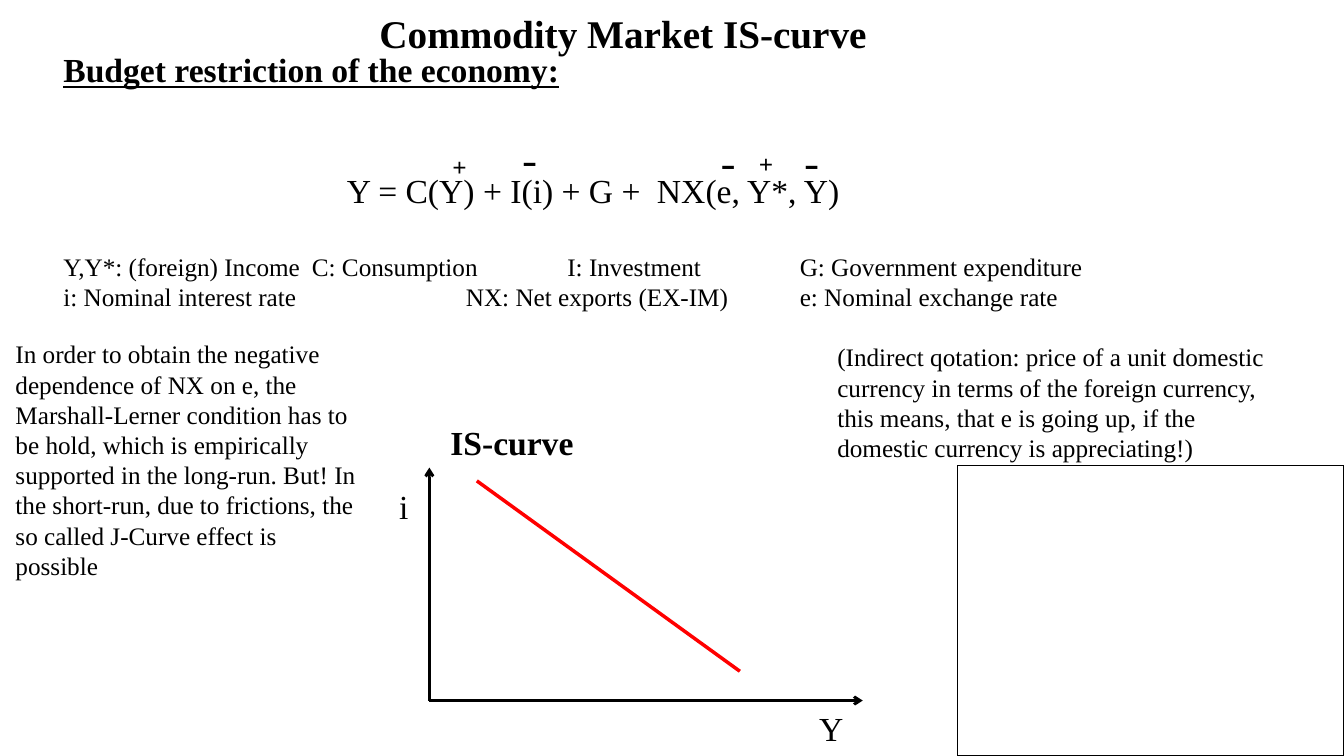
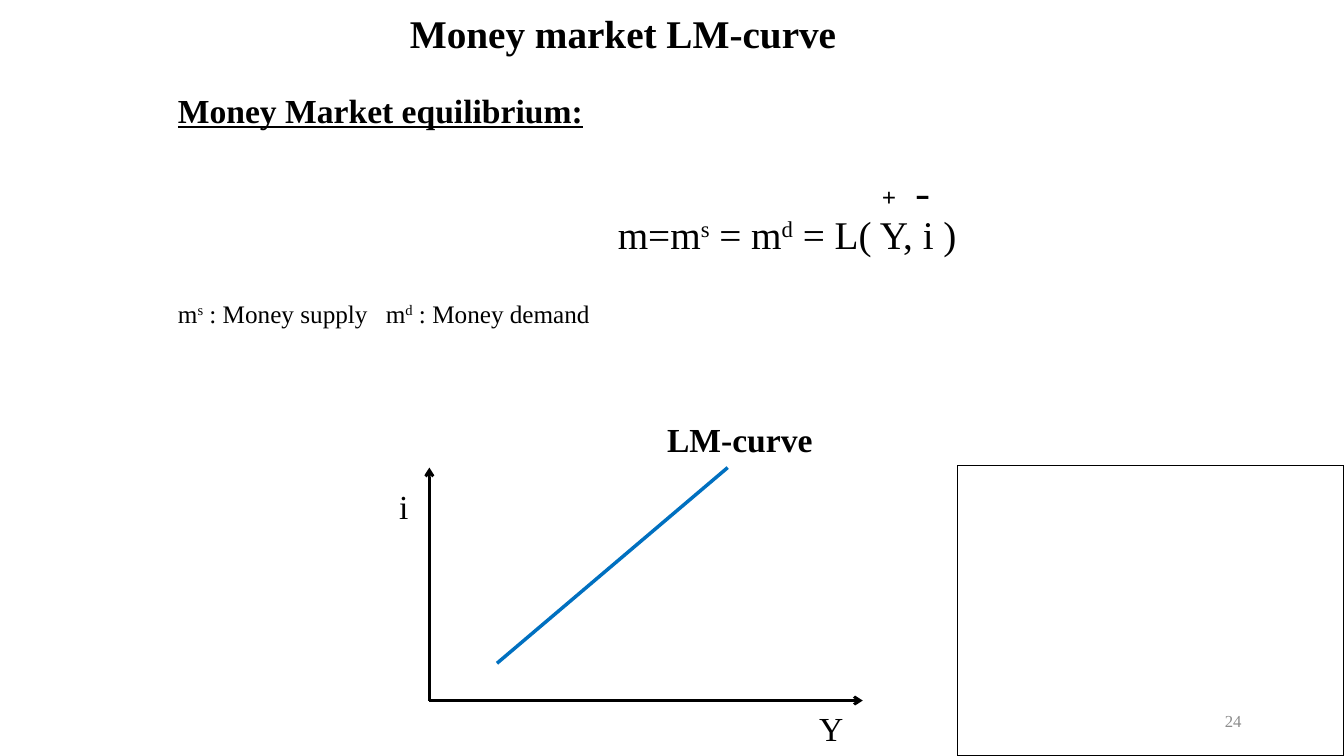
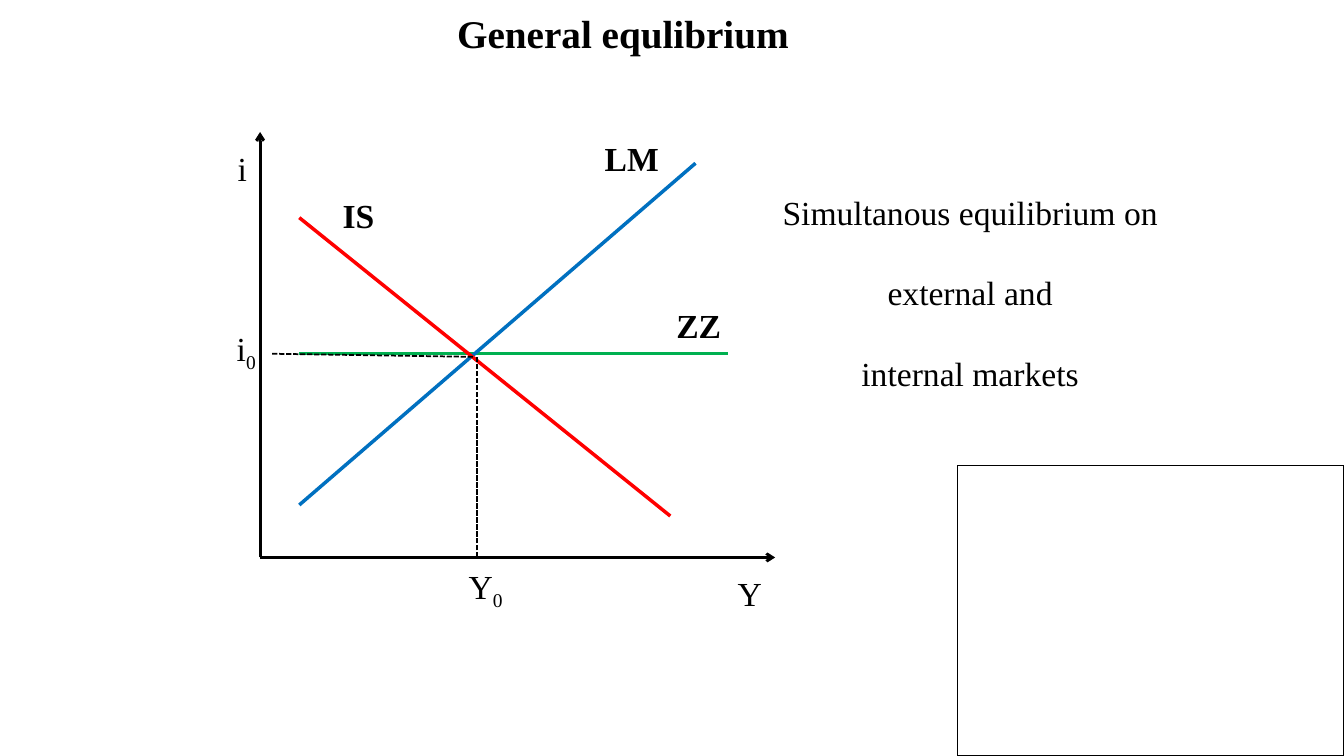
from lxml.etree import SubElement
from pptx import Presentation
from pptx.dml.color import RGBColor
from pptx.enum.dml import MSO_LINE_DASH_STYLE as Dash
from pptx.enum.shapes import MSO_CONNECTOR as Connector, MSO_SHAPE as Shape
from pptx.enum.text import MSO_ANCHOR as Anchor, MSO_AUTO_SIZE as AutoSize, PP_ALIGN as Align
from pptx.oxml.ns import qn
from pptx.util import Pt

BLACK = RGBColor(0x00, 0x00, 0x00)
GREY = RGBColor(0x8C, 0x8C, 0x8C)
RED = RGBColor(0xFF, 0x00, 0x00)
BLUE = RGBColor(0x00, 0x70, 0xC0)
GREEN = RGBColor(0x00, 0xB0, 0x50)

SERIF = "Times New Roman"
MONO = "Noto Sans Mono"
LINE_HEIGHT = 1.2
SUPER, SUB = 30000, -25000
TITLE_ONLY = 5


class Lecture:
    def __init__(self):
        self.deck = Presentation()
        self.deck.slide_width, self.deck.slide_height = Pt(960), Pt(540)
        self.page = None

    def new_page(self, title):
        self.page = self.deck.slides.add_slide(self.deck.slide_layouts[TITLE_ONLY])
        box = self.page.shapes.title
        box.left, box.top, box.width, box.height = Pt(179.5), Pt(3), Pt(531), Pt(41)
        self.fill_text(box.text_frame, [[title]], size=28, bold=True, align=Align.CENTER)

    def fill_text(self, frame, paragraphs, size=24, bold=False, underline=False,
                  color=BLACK, font=SERIF, align=Align.LEFT, anchor=Anchor.TOP,
                  wrap=True, gap=0, tabs=()):
        """Each paragraph is a list of runs: a string, or a (string, baseline) pair.

        tabs holds one list of tab positions for each paragraph that needs them.
        """
        frame.word_wrap = wrap
        frame.auto_size = AutoSize.NONE
        frame.vertical_anchor = anchor
        for index, runs in enumerate(paragraphs):
            para = frame.add_paragraph() if index else frame.paragraphs[0]
            para.alignment = align
            para.space_before = Pt(gap if index else 0)
            if font == SERIF:
                para.line_spacing = Pt(size * LINE_HEIGHT)
            if index < len(tabs):
                tab_list = SubElement(para._p.get_or_add_pPr(), qn("a:tabLst"))
                for stop in tabs[index]:
                    SubElement(tab_list, qn("a:tab"), pos=str(int(Pt(stop))), algn="l")
            for run in runs:
                text, baseline = (run, None) if isinstance(run, str) else run
                span = para.add_run()
                span.text = text
                span.font.name, span.font.size = font, Pt(size)
                span.font.bold, span.font.underline = bold, underline
                span.font.color.rgb = color
                if baseline:
                    span._r.get_or_add_rPr().set("baseline", str(baseline))

    def text(self, left, top, width, height, paragraphs, **style):
        box = self.page.shapes.add_textbox(Pt(left), Pt(top), Pt(width), Pt(height))
        self.fill_text(box.text_frame, paragraphs, **style)

    def label(self, left, top, width, *runs, **style):
        self.text(left, top, width, 36, [runs], wrap=False, **style)

    def heading(self, left, top, text):
        self.text(left, top, 500, 36, [[text]], bold=True, underline=True)

    def plus(self, left, top):
        self.label(left, top, 25, "+", size=18, bold=True)

    def minus(self, left, top):
        self.label(left, top, 25, "−", size=18, bold=True, font=MONO)

    def line(self, start, end, color=BLACK, width=2.5, dash=None, arrow=False):
        line = self.page.shapes.add_connector(
            Connector.STRAIGHT, *(Pt(value) for value in (*start, *end)))
        line.line.color.rgb = color
        line.line.width = Pt(width)
        if dash:
            line.line.dash_style = dash
        properties = line._element.spPr
        if arrow:
            SubElement(properties.find(qn("a:ln")), qn("a:tailEnd"), type="arrow")
        SubElement(properties, qn("a:effectLst"))

    def axes(self, left, bottom, right, top):
        for end in ((left, top), (right, bottom)):
            self.line((left, bottom), end, width=2, arrow=True)

    def curve_axes(self):
        """Labelled axes shared by the pages that show a single curve."""
        self.axes(306.7, 500.4, 616.3, 334)
        self.label(278, 343.5, 21, "i")
        self.label(578, 502, 32.4, "Y")

    def corner_frame(self):
        frame = self.page.shapes.add_shape(
            Shape.RECTANGLE, Pt(684), Pt(332.6), Pt(276), Pt(207.4))
        frame.shadow.inherit = False
        frame.fill.background()
        frame.line.color.rgb = BLACK
        frame.line.width = Pt(1)


def add_commodity_market(lecture):
    lecture.new_page("Commodity Market IS-curve")
    lecture.heading(38.2, 31.7, "Budget restriction of the economy:")
    lecture.text(240.7, 118, 400, 36, [["Y = C(Y) + I(i) + G +\tNX(e, Y*, Y)"]],
                 tabs=[[221.5]])
    for left, top in ((535, 102.2), (316, 104.4)):
        lecture.plus(left, top)
    for left, top in ((365.8, 102.2), (567.4, 104.4), (507.6, 104.4)):
        lecture.minus(left, top)
    lecture.text(38.2, 175.7, 775, 52, [
        ["Y,Y*: (foreign) Income\tC: Consumption\tI: Investment\tG: Government expenditure"],
        ["i: Nominal interest rate\tNX: Net exports (EX-IM)\te: Nominal exchange rate"],
    ], size=18, tabs=[[177.5, 360, 526], [287.5, 526]])
    lecture.text(591, 240.5, 339, 94, [[
        "(Indirect qotation: price of a unit domestic currency in terms of the foreign "
        "currency, this means, that e is going up, if the domestic currency is "
        "appreciating!)"]], size=18)
    lecture.text(4, 238.3, 261.4, 181.4, [[
        "In order to obtain the negative dependence of NX on e, the Marshall-Lerner "
        "condition has to be hold, which is empirically supported in the long-run. But! "
        "In the short-run, due to frictions, the so called J-Curve effect is possible"]],
        size=18)
    lecture.curve_axes()
    lecture.line((340.6, 343.5), (528.5, 479.5), RED)
    lecture.label(314.6, 298, 104, "IS-curve", bold=True)
    lecture.corner_frame()


def add_money_market(lecture):
    lecture.new_page("Money market LM-curve")
    lecture.text(678, 500.4, 216, 28.8, [["24"]], size=12, color=GREY,
                 align=Align.RIGHT, anchor=Anchor.MIDDLE)
    lecture.heading(120, 60.5, "Money Market equilibrium:")
    lecture.text(434.2, 146.9, 300, 41, [
        ["m=m", ("s", SUPER), " = m", ("d", SUPER), " = L( Y, i )"]], size=28)
    lecture.plus(622.8, 126)
    lecture.minus(646.6, 126)
    lecture.text(120, 209.3, 500, 30, [
        ["m", ("s", SUPER), " : Money supply\tm", ("d", SUPER), " : Money demand"]],
        size=18, tabs=[[148.5]])
    lecture.curve_axes()
    lecture.line((355, 473.8), (519.8, 334), BLUE)
    lecture.label(469.4, 296, 119.5, "LM-curve", bold=True)
    lecture.corner_frame()


def add_general_equilibrium(lecture):
    lecture.new_page("General equlibrium")
    lecture.axes(185.8, 398.2, 553.7, 94.3)
    lecture.label(162.7, 102.2, 21, "i")
    lecture.label(519.8, 406, 32.4, "Y")
    lecture.line((213.8, 252.7), (519.8, 252.7), GREEN)
    lecture.line((213.8, 360.7), (496.8, 116.6), BLUE)
    lecture.line((213.8, 155.5), (478.8, 368.6), RED)
    for left, top, name in ((424.8, 95, "LM"), (237.6, 136, "IS"), (476, 214.6, "ZZ")):
        lecture.label(left, top, 54, name, bold=True)
    lecture.text(546.5, 133.2, 293, 152.6, [
        ["Simultanous equilibrium on"], ["external and"], ["internal markets"]],
        align=Align.CENTER, gap=24 * LINE_HEIGHT)
    lecture.label(162, 234.7, 32.4, "i", ("0", SUB))
    lecture.label(327.6, 404.6, 41, "Y", ("0", SUB))
    for start, end in (((194.4, 252.7), (338.4, 254.9)), ((340.6, 398.2), (340.6, 254.9))):
        lecture.line(start, end, width=1.25, dash=Dash.SQUARE_DOT)
    lecture.corner_frame()


def main():
    lecture = Lecture()
    add_commodity_market(lecture)
    add_money_market(lecture)
    add_general_equilibrium(lecture)
    lecture.deck.save("out.pptx")


if __name__ == "__main__":
    main()
